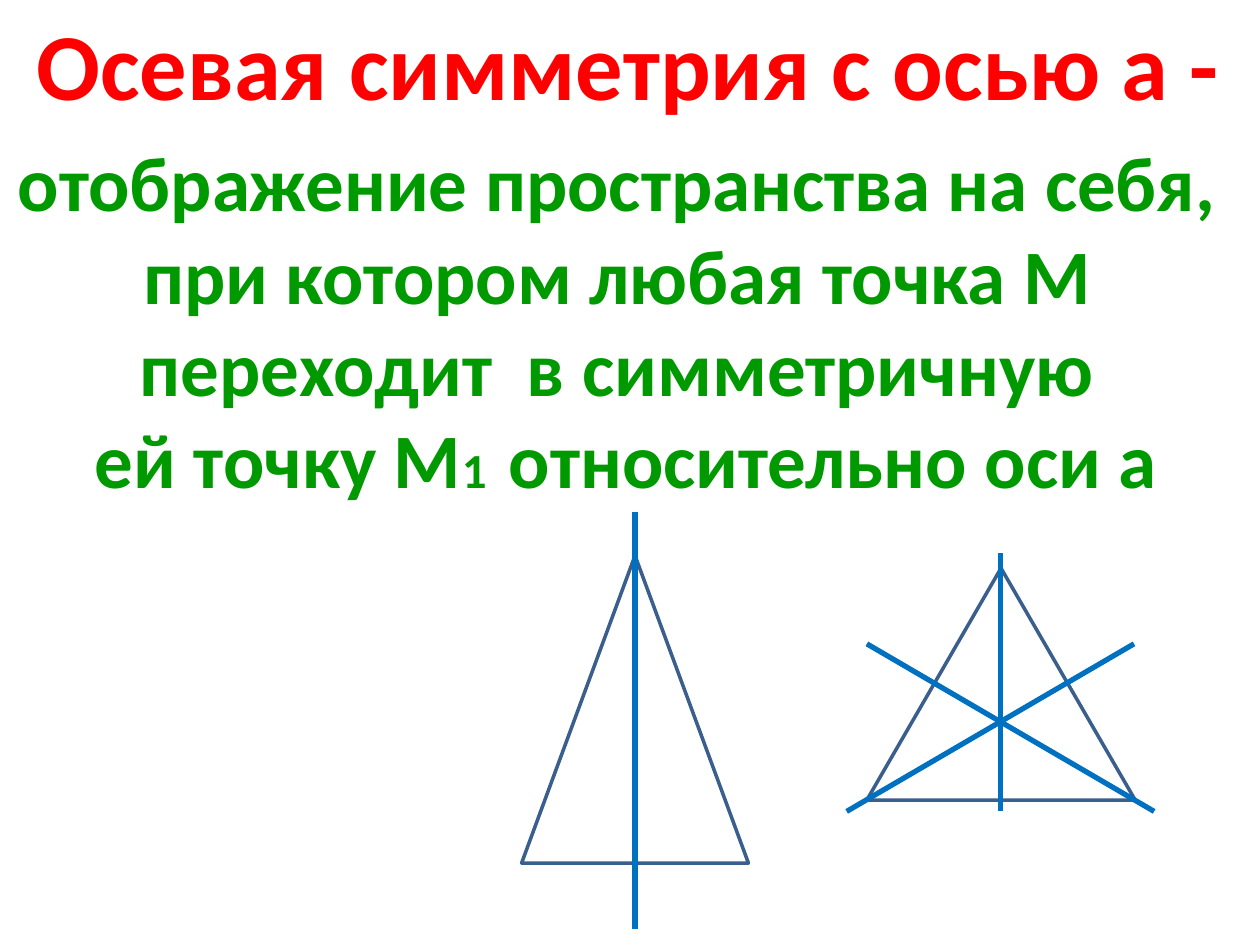
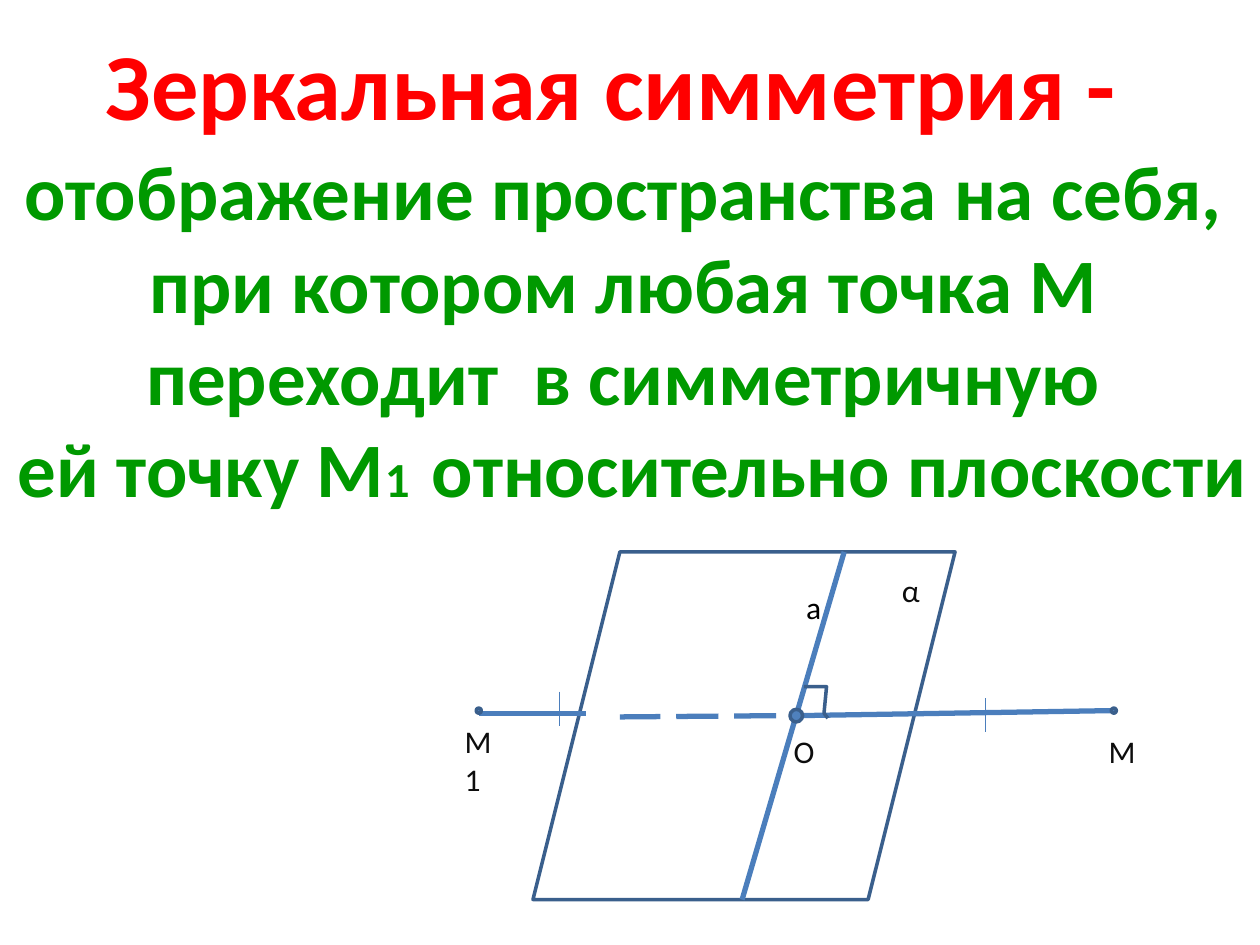
"""Build two slides that define axial and mirror symmetry."""
from lxml.etree import SubElement
from pptx import Presentation
from pptx.dml.color import RGBColor
from pptx.enum.dml import MSO_LINE as Dash
from pptx.enum.shapes import MSO_CONNECTOR as Link, MSO_SHAPE as Kind
from pptx.enum.text import MSO_ANCHOR as Anchor, MSO_AUTO_SIZE as Fit, PP_ALIGN as Align
from pptx.oxml.ns import qn
from pptx.util import Inches, Pt

hue = RGBColor.from_string
RED, GREEN, EDGE, DOT = "FF0000", "009900", "3A5F8C", "4F81BD"
AXIS, RAY, WHITE, DARK = "0070C0", "4B7EBC", "FFFFFF", "0D0D0D"


def draw(slide, kind, box, fill=None):
    """Add an outlined preset shape."""
    shape = slide.shapes.add_shape(kind, *map(Inches, box))
    shape.shadow.inherit = False
    shape.line.color.rgb = hue(EDGE)
    shape.line.width = Pt(2)
    if fill:
        shape.fill.solid()
        shape.fill.fore_color.rgb = hue(fill)
    else:
        shape.fill.background()


def join(slide, ends, color, width=3, dash=None):
    """Add a straight line between two points."""
    line = slide.shapes.add_connector(Link.STRAIGHT, *map(Inches, ends))
    line.line.color.rgb = hue(color)
    line.line.width = Pt(width)
    if dash:
        line.line.dash_style = dash
    SubElement(line._element.spPr, qn("a:effectLst"))


deck = Presentation()
deck.slide_width, deck.slide_height = Inches(10), Inches(7.5)

pages = [
    ("Осевая симметрия с осью а -", (-0.03, 0, 10.03, 1.01),
     "относительно оси а", (0, 1.02, 9.94, 3.06)),
    ("Зеркальная симметрия -", (0.7, 0.16, 8.3, 1.01),
     "относительно плоскости", (0, 1.09, 10.04, 3.06)),
]
for head, top, tail, low in pages:
    slide = deck.slides.add_slide(deck.slide_layouts[1])
    title, body = slide.placeholders
    title.text = head
    body.text = "\n".join([
        "отображение пространства на себя, ",
        "при котором любая точка М ",
        "переходит  в симметричную ",
        "ей точку М",
    ])
    last = body.text_frame.paragraphs[-1]
    sub = last.add_run()
    sub.text = "1  "
    sub.font.size = Pt(28)
    last.add_run().text = tail
    for holder, box, size, color in ((title, top, 54, RED), (body, low, 44, GREEN)):
        holder.left, holder.top, holder.width, holder.height = map(Inches, box)
        frame = holder.text_frame
        frame.word_wrap = False
        frame.auto_size = Fit.NONE
        frame.vertical_anchor = Anchor.TOP
        for para in frame.paragraphs:
            props = para._p.get_or_add_pPr()
            props.set("marL", "0")
            props.set("indent", "0")
            SubElement(props, qn("a:buNone"))
            para.alignment = Align.CENTER
            para.space_before = Pt(0)
            font = para.font
            font.name, font.size, font.bold = "Calibri", Pt(size), True
            font.color.rgb = hue(color)

axial, mirror = deck.slides

for box in ((4.14, 4.41, 1.8, 2.44), (6.88, 4.51, 2.13, 1.84)):
    draw(axial, Kind.ISOSCELES_TRIANGLE, box)
for ends in (
    (5.04, 4.06, 5.04, 7.37),
    (6.72, 6.44, 9, 5.11),
    (6.88, 5.11, 9.16, 6.44),
    (7.94, 4.39, 7.94, 6.44),
):
    join(axial, ends, AXIS)

draw(mirror, Kind.PARALLELOGRAM, (4.23, 4.38, 3.35, 2.76), WHITE)
join(mirror, (6.32, 5.68, 8.82, 5.64), RAY)
join(mirror, (3.8, 5.66, 4.65, 5.66), RAY)
join(mirror, (6.16, 5.68, 4.92, 5.69), RAY, dash=Dash.LONG_DASH)
join(mirror, (5.89, 7.14, 6.7, 4.38), RAY)
for x, y in ((7.82, 5.54), (4.44, 5.49)):
    join(mirror, (x, y, x, y + 0.27), RAY, 0.75)
for x, y, size in ((8.82, 5.62, 0.04), (3.78, 5.62, 0.04), (6.27, 5.63, 0.1)):
    draw(mirror, Kind.OVAL, (x, y, size, size), DOT)

pen = mirror.shapes.build_freeform(Inches(6.38), Inches(5.45))
pen.add_line_segments(
    [(Inches(x), Inches(y)) for x, y in ((6.56, 5.45), (6.54, 5.66), (6.57, 5.7))],
    close=False,
)
angle = pen.convert_to_shape()
angle.shadow.inherit = False
angle.fill.background()
angle.line.color.rgb = hue(EDGE)
angle.line.width = Pt(2)

for text, x, y, width, color in (
    ("М1", 3.59, 5.68, 0.46, DARK),
    ("M", 8.7, 5.76, 0.33, DARK),
    ("α", 7.06, 4.48, 0.31, DARK),
    ("О", 6.2, 5.76, 0.33, DARK),
    ("а", 6.3, 4.62, 0.29, "000000"),
):
    label = mirror.shapes.add_textbox(*map(Inches, (x, y, width, 0.33)))
    label.text_frame.word_wrap = True
    para = label.text_frame.paragraphs[0]
    para.text = text
    para.font.name, para.font.size = "Calibri", Pt(18)
    para.font.color.rgb = hue(color)

deck.save("out.pptx")
